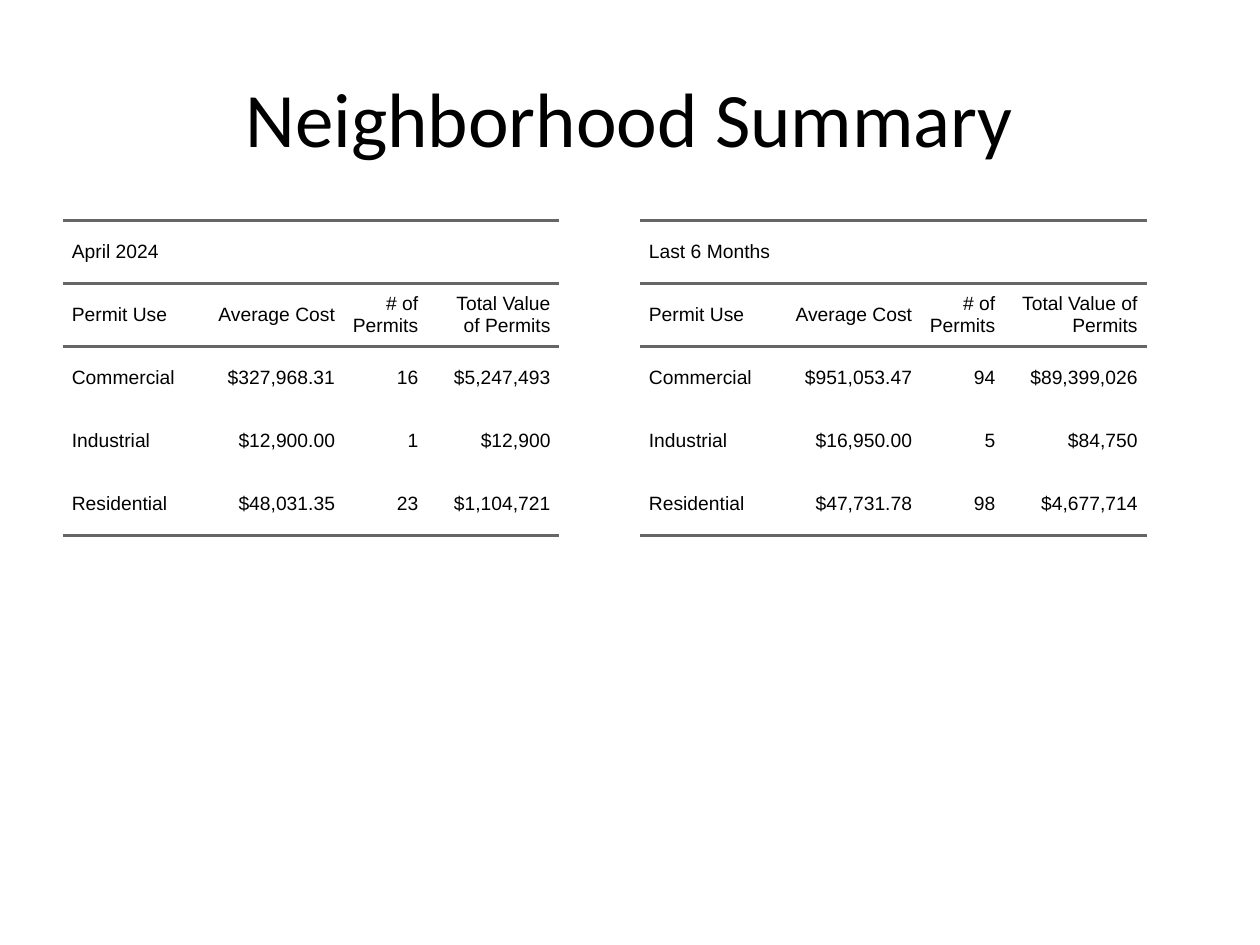
import pptx
import pptx.dml.color
import pptx.enum.text
import pptx.oxml
import pptx.oxml.ns
import pptx.util

Inches = pptx.util.Inches
Pt = pptx.util.Pt
ALIGN = pptx.enum.text.PP_ALIGN
MIDDLE = pptx.enum.text.MSO_ANCHOR.MIDDLE
BLACK = pptx.dml.color.RGBColor(0x00, 0x00, 0x00)
RULE_GRAY = pptx.dml.color.RGBColor(0x66, 0x66, 0x66)
PADDING = Inches(0.07)
RULED_EDGES = {0, 1, 2, 5}


def write(paragraph, text, font_name, size, alignment):
    paragraph.alignment = alignment
    run = paragraph.add_run()
    run.text = text
    run.font.name = font_name
    run.font.size = Pt(size)
    run.font.color.rgb = BLACK


def add_border(cell, side, ruled):
    fill = f'<a:solidFill><a:srgbClr val="{RULE_GRAY}"/></a:solidFill>' if ruled else "<a:noFill/>"
    width = Pt(1.5) if ruled else 0
    cell._tc.get_or_add_tcPr().append(pptx.oxml.parse_xml(
        f'<a:ln{side} {pptx.oxml.ns.nsdecls("a")} w="{width}">{fill}</a:ln{side}>'))


deck = pptx.Presentation()
deck.slide_width = Inches(10)
deck.slide_height = Inches(7.5)
slide = deck.slides.add_slide(deck.slide_layouts[6])

header = ["Permit Use", "Average Cost", "# of Permits", "Total Value of Permits"]
periods = [
    (0.5, [1.1, 1.13, 0.66, 1.05], [
        ["April 2024", "", "", ""],
        header,
        ["Commercial", "$327,968.31", "16", "$5,247,493"],
        ["Industrial", "$12,900.00", "1", "$12,900"],
        ["Residential", "$48,031.35", "23", "$1,104,721"],
    ]),
    (5.08, [1.1, 1.13, 0.66, 1.13], [
        ["Last 6 Months", "", "", ""],
        header,
        ["Commercial", "$951,053.47", "94", "$89,399,026"],
        ["Industrial", "$16,950.00", "5", "$84,750"],
        ["Residential", "$47,731.78", "98", "$4,677,714"],
    ]),
]

for left, column_widths, permit_rows in periods:
    frame = slide.shapes.add_table(
        len(permit_rows), len(header), Inches(left), Inches(1.75), Inches(4.42), Inches(2.5))
    permits = frame.table
    permits.first_row = False
    permits.horz_banding = False
    for column, width in zip(permits.columns, column_widths):
        column.width = Inches(width)
    for row in permits.rows:
        row.height = Inches(0.5)
    frame.width = Inches(4.42)
    frame.height = Inches(4.95)
    permits.cell(0, 0).merge(permits.cell(0, len(header) - 1))

    for row_index, values in enumerate(permit_rows):
        for column_index, value in enumerate(values):
            cell = permits.cell(row_index, column_index)
            cell.vertical_anchor = MIDDLE
            cell.margin_left = cell.margin_right = 0
            cell.margin_top = cell.margin_bottom = PADDING
            for side in "LR":
                add_border(cell, side, False)
            add_border(cell, "T", row_index in RULED_EDGES)
            add_border(cell, "B", row_index + 1 in RULED_EDGES)
            cell.fill.background()
            if not value:
                continue
            paragraph = cell.text_frame.paragraphs[0]
            write(paragraph, value, "Arial", 11, ALIGN.RIGHT if column_index else ALIGN.LEFT)
            paragraph.space_before = paragraph.space_after = Pt(5)
            indents = paragraph._p.get_or_add_pPr()
            indents.set("marL", str(PADDING))
            indents.set("marR", str(PADDING))
            indents.set("indent", "0")

title = slide.shapes.add_textbox(Inches(0.5), Inches(0.3), Inches(9), Inches(1.25))
title.text_frame.word_wrap = True
title.text_frame.vertical_anchor = MIDDLE
write(title.text_frame.paragraphs[0], "Neighborhood Summary", "Calibri", 44, ALIGN.CENTER)

deck.save("out.pptx")
